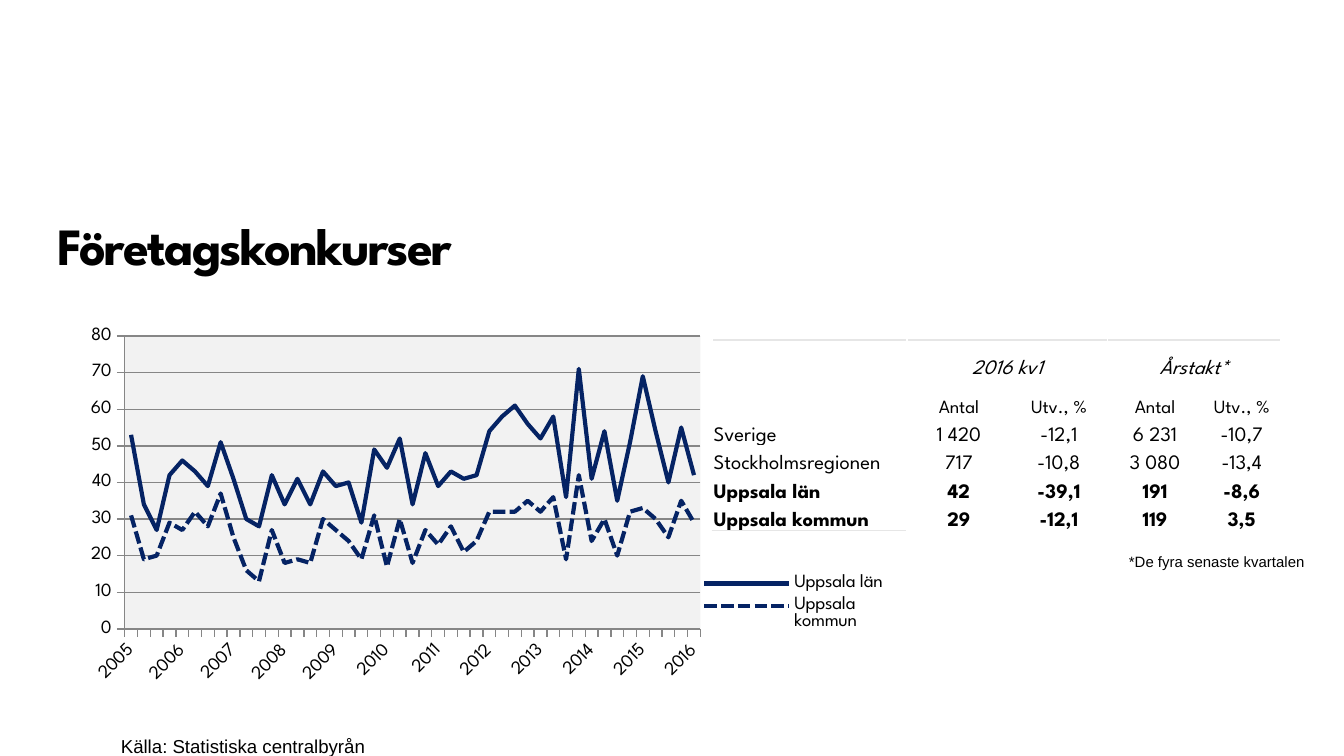
from lxml.etree import SubElement
from pptx import Presentation
from pptx.chart.data import CategoryChartData
from pptx.dml.color import RGBColor
from pptx.enum.chart import XL_CHART_TYPE, XL_LEGEND_POSITION, XL_TICK_MARK
from pptx.enum.dml import MSO_LINE
from pptx.enum.text import MSO_ANCHOR, MSO_AUTO_SIZE, PP_ALIGN
from pptx.oxml import parse_xml
from pptx.oxml.ns import nsdecls, qn
from pptx.util import Inches, Pt

TITLE = "Företagskonkurser"
SOURCE = "Källa: Statistiska centralbyrån"
NOTE = "*De fyra senaste kvartalen"
YEARS = range(2005, 2017)
LINES = [
    ("Uppsala län", MSO_LINE.SOLID,
     [53, 34, 27, 42, 46, 43, 39, 51, 41, 30, 28, 42, 34, 41, 34,
      43, 39, 40, 29, 49, 44, 52, 34, 48, 39, 43, 41, 42, 54, 58,
      61, 56, 52, 58, 36, 71, 41, 54, 35, 51, 69, 54, 40, 55, 42]),
    ("Uppsala kommun", MSO_LINE.SQUARE_DOT,
     [31, 19, 20, 29, 27, 32, 28, 37, 25, 16, 13, 27, 18, 19, 18,
      30, 27, 24, 19, 31, 17, 30, 18, 27, 23, 28, 21, 24, 32, 32,
      32, 35, 32, 36, 19, 42, 24, 30, 20, 32, 33, 30, 25, 35, 29]),
]
ROWS = [
    ("", "2016 kv1", "", "Årstakt*", ""),
    ("", "Antal", "Utv., %", "Antal", "Utv., %"),
    ("Sverige", "1 420", "-12,1", "6 231", "-10,7"),
    ("Stockholmsregionen", "717", "-10,8", "3 080", "-13,4"),
    ("Uppsala län", "42", "-39,1", "191", "-8,6"),
    ("Uppsala kommun", "29", "-12,1", "119", "3,5"),
]
WIDE = 10
HIGH = WIDE * 9 / 16
COLS = [1.45, 0.77, 0.72, 0.71, 0.58]
TALL = [0.29] * 2 + [0.21] * 4

HEAD, SANS = "League Spartan", "Arial"
INK, NAVY, GREY, PALE, RULE = (
    RGBColor.from_string(c)
    for c in ("000000", "052364", "868686", "F2F2F2", "E6E6E6"))
THEME = {
    "title": {"name": HEAD, "size": Pt(28), "bold": True},
    "source": {"name": SANS, "size": Pt(10)},
    "note": {"name": SANS, "size": Pt(8)},
    "chart": {"name": HEAD, "size": Pt(10)},
    "group": {"name": HEAD, "size": Pt(11), "italic": True},
    "label": {"name": HEAD, "size": Pt(10)},
    "body": {"name": HEAD, "size": Pt(11)},
    "strong": {"name": HEAD, "size": Pt(11), "bold": True},
}
STYLES = ["group", "label", "body", "body", "strong", "strong"]


def put(obj, **vals):
    for key, val in vals.items():
        setattr(obj, key, val)


def style(font, kind):
    put(font, **THEME[kind])
    font.color.rgb = INK


def text(slide, area, words, kind, lead=None):
    box = slide.shapes.add_textbox(*map(Inches, area))
    frame = box.text_frame
    put(frame, margin_left=0, margin_right=0, margin_top=0,
        margin_bottom=0, word_wrap=True, auto_size=MSO_AUTO_SIZE.NONE)
    para = frame.paragraphs[0]
    para.line_spacing = lead
    run = para.add_run()
    run.text = words
    style(run.font, kind)
    return run


def edge(cell, side):
    props = cell._tc.get_or_add_tcPr()
    line = parse_xml(
        f'<a:{side} {nsdecls("a")} w="{Pt(1)}"><a:solidFill>'
        f'<a:srgbClr val="{RULE}"/></a:solidFill></a:{side}>')
    props.insert(0, line)


def place(owner, x, y, w, h, inner=False):
    old = owner.find(qn("c:layout"))
    if old is not None:
        owner.remove(old)
    parts = [("layoutTarget", "inner")] if inner else []
    parts += [("xMode", "edge"), ("yMode", "edge"),
              ("x", x), ("y", y), ("w", w), ("h", h)]
    body = "".join(f'<c:{tag} val="{val}"/>' for tag, val in parts)
    node = parse_xml(f'<c:layout {nsdecls("c")}><c:manualLayout>{body}'
                     '</c:manualLayout></c:layout>')
    pos = owner.find(qn("c:legendPos"))
    if pos is None:
        owner.insert(0, node)
    else:
        pos.addnext(node)


def plot(slide):
    data = CategoryChartData(number_format="#,##0")
    count = len(LINES[0][2])
    data.categories = [
        "" if i % 4 else str(YEARS[i // 4]) for i in range(count)]
    for name, _, vals in LINES:
        data.add_series(name, vals)
    chart = slide.shapes.add_chart(
        XL_CHART_TYPE.LINE, *map(Inches, (0.55, 2.39, 6.3, 2.76)), data).chart
    put(chart, has_title=False, has_legend=True)
    style(chart.font, "chart")
    put(chart.legend, position=XL_LEGEND_POSITION.RIGHT,
        include_in_layout=False)
    chart.plots[0].vary_by_categories = False
    for item, (_, dash, _) in zip(chart.plots[0].series, LINES):
        item.smooth = False
        put(item.format.line, width=Pt(2.25), dash_style=dash)
        item.format.line.color.rgb = NAVY
    cats, vals = chart.category_axis, chart.value_axis
    put(vals, minimum_scale=0, maximum_scale=80, major_unit=10,
        has_major_gridlines=True)
    for axis in (cats, vals):
        axis.major_tick_mark = XL_TICK_MARK.OUTSIDE
        style(axis.tick_labels.font, "chart")
    for part in (cats, vals, vals.major_gridlines):
        part.format.line.width = Pt(0.75)
        part.format.line.color.rgb = GREY
    cats._element.txPr.find(qn("a:bodyPr")).set("rot", "-2700000")
    last = cats._element.find(qn("c:noMultiLvlLbl"))
    for tag in ("c:tickLblSkip", "c:tickMarkSkip"):
        skip = SubElement(cats._element, qn(tag), val="1")
        last.addprevious(skip)
    area = chart._chartSpace.chart.plotArea
    place(area, 0.06, 0.04, 0.68, 0.79, True)
    place(chart.legend._element, 0.74, 0.67, 0.22, 0.18)
    area.append(parse_xml(
        f'<c:spPr {nsdecls("c", "a")}><a:solidFill>'
        f'<a:srgbClr val="{PALE}"/></a:solidFill></c:spPr>'))


def grid(slide):
    table = slide.shapes.add_table(
        len(ROWS), len(COLS),
        *map(Inches, (5.3, 2.53, sum(COLS), sum(TALL)))).table
    put(table, first_row=False, horz_banding=False)
    for col, wide in zip(table.columns, COLS):
        col.width = Inches(wide)
    for row, high in zip(table.rows, TALL):
        row.height = Inches(high)
    for i, (vals, kind) in enumerate(zip(ROWS, STYLES)):
        for j, val in enumerate(vals):
            cell = table.cell(i, j)
            put(cell, margin_left=Inches(0.01), margin_right=Inches(0.01),
                margin_top=Inches(0.01), margin_bottom=0,
                vertical_anchor=MSO_ANCHOR.BOTTOM, text=val)
            cell.fill.background()
            para = cell.text_frame.paragraphs[0]
            para.alignment = PP_ALIGN.CENTER if j else PP_ALIGN.LEFT
            style(para.font, kind)
            for run in para.runs:
                style(run.font, kind)
            if i == 0:
                edge(cell, "lnT")
    edge(table.cell(len(ROWS) - 1, 0), "lnB")
    for j in (1, 3):
        table.cell(0, j).merge(table.cell(0, j + 1))


def main():
    deck = Presentation()
    put(deck, slide_width=Inches(WIDE), slide_height=Inches(HIGH))
    slide = deck.slides.add_slide(deck.slide_layouts[6])
    title = text(slide, (0.43, 1.59, 6.21, 0.8), TITLE, "title")
    title.font._element.set("spc", "-90")
    text(slide, (0.9, 5.3, 2, 0.42), SOURCE, "source", Pt(24))
    grid(slide)
    text(slide, (8.4, 3.91, 1.5, 1), NOTE, "note", Pt(24))
    plot(slide)
    deck.save("out.pptx")


if __name__ == "__main__":
    main()
